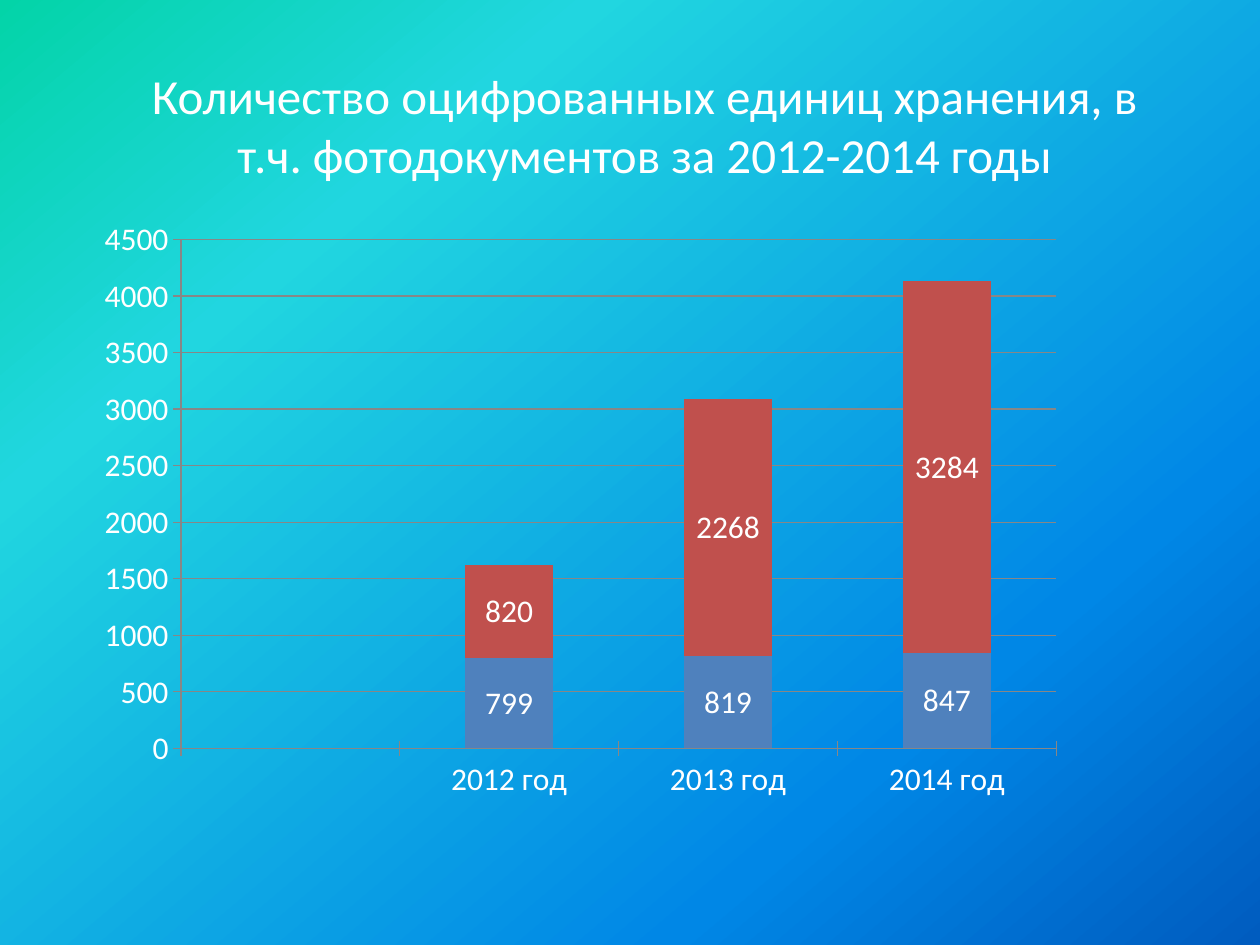
import pptx
import pptx.chart.data
import pptx.dml.color
import pptx.enum.chart
import pptx.enum.text
import pptx.oxml
import pptx.oxml.ns
import pptx.util
from lxml import etree

WIDTH, HEIGHT = 10, 7.5
COLORS = {"text": "FFFFFF", "blue": "4F81BD", "red": "C0504D"}
GRADIENT = {0: "03D4A8", 25: "21D6E0", 75: "0087E6", 100: "005CBF"}
GRADIENT_ANGLE = 50
FONT = "Calibri"

TITLE = ("Количество оцифрованных единиц хранения, "
         "в т.ч. фотодокументов за 2012-2014 годы")
YEARS = ["", "2012 год", "2013 год", "2014 год"]
SERIES = {
    "Series 1": ("blue", [None, 799, 819, 847]),
    "Series 2": ("red", [None, 820, 2268, 3284]),
}
PLOT_SHARES = {"x": 0.104, "y": 0.031, "w": 0.772, "h": 0.816}


def rgb(name):
    return pptx.dml.color.RGBColor.from_string(COLORS[name])


def set_attributes(target, values):
    for name, value in values.items():
        setattr(target, name, value)


def box(left, top, width, height):
    """Turn shares of the slide's size into a placement."""
    return {
        "left": pptx.util.Inches(left * WIDTH),
        "top": pptx.util.Inches(top * HEIGHT),
        "width": pptx.util.Inches(width * WIDTH),
        "height": pptx.util.Inches(height * HEIGHT),
    }


def format_font(font, size):
    set_attributes(font, {"name": FONT, "size": pptx.util.Pt(size)})
    font.color.rgb = rgb("text")


def paint_background(slide):
    fill = slide.background.fill
    fill.gradient()
    fill.gradient_angle = -GRADIENT_ANGLE % 360
    # Replace the default stops with the four of this slide
    stops = slide.background._cSld.find(".//" + pptx.oxml.ns.qn("a:gsLst"))
    for stop in list(stops):
        stops.remove(stop)
    for position, color in GRADIENT.items():
        stop = etree.SubElement(stops, pptx.oxml.ns.qn("a:gs"), pos=str(position * 1000))
        etree.SubElement(stop, pptx.oxml.ns.qn("a:srgbClr"), val=color)


def add_title(slide):
    title = slide.shapes.title
    set_attributes(title, box(0.109, 0.063, 0.805, 0.139))
    frame = title.text_frame
    set_attributes(frame, {
        "text": TITLE,
        "word_wrap": True,
        "auto_size": pptx.enum.text.MSO_AUTO_SIZE.SHAPE_TO_FIT_TEXT,
        "vertical_anchor": pptx.enum.text.MSO_ANCHOR.TOP,
    })
    paragraph = frame.paragraphs[0]
    paragraph.alignment = pptx.enum.text.PP_ALIGN.CENTER
    format_font(paragraph.runs[0].font, 28)


def place_plot(chart):
    """Fix the inner plot area by shares of the chart's size."""
    plot_area = chart._chartSpace.chart.plotArea
    for old in plot_area.findall(pptx.oxml.ns.qn("c:layout")):
        plot_area.remove(old)
    layout = etree.Element(pptx.oxml.ns.qn("c:layout"))
    manual = etree.SubElement(layout, pptx.oxml.ns.qn("c:manualLayout"))
    settings = {"layoutTarget": "inner", "xMode": "edge", "yMode": "edge", **PLOT_SHARES}
    for name, value in settings.items():
        etree.SubElement(manual, pptx.oxml.ns.qn("c:" + name), val=str(value))
    plot_area.insert(0, layout)


def add_stacked_chart(slide):
    data = pptx.chart.data.CategoryChartData()
    data.categories = YEARS
    for name, (_, values) in SERIES.items():
        data.add_series(name, values)
    place = box(0.05, 0.233, 0.9, 0.66)
    chart = slide.shapes.add_chart(
        pptx.enum.chart.XL_CHART_TYPE.COLUMN_STACKED,
        place["left"], place["top"], place["width"], place["height"], data).chart
    set_attributes(chart, {"has_title": False, "has_legend": False})
    format_font(chart.font, 18)
    place_plot(chart)

    # Columns and their value labels
    plot = chart.plots[0]
    set_attributes(plot, {"overlap": 100, "gap_width": 150, "vary_by_categories": False})
    for series, (color, _) in zip(plot.series, SERIES.values()):
        series.format.fill.solid()
        series.format.fill.fore_color.rgb = rgb(color)
        series.data_labels.show_value = True

    # Axes
    for axis, gridlines in ((chart.category_axis, False), (chart.value_axis, True)):
        set_attributes(axis, {
            "has_major_gridlines": gridlines,
            "major_tick_mark": pptx.enum.chart.XL_TICK_MARK.CROSS,
        })
    set_attributes(chart.value_axis,
                   {"minimum_scale": 0, "maximum_scale": 4500, "major_unit": 500})


def main():
    presentation = pptx.Presentation()
    set_attributes(presentation, {
        "slide_width": pptx.util.Inches(WIDTH),
        "slide_height": pptx.util.Inches(HEIGHT),
    })
    slide = presentation.slides.add_slide(presentation.slide_layouts[5])
    paint_background(slide)
    add_stacked_chart(slide)
    add_title(slide)
    presentation.save("out.pptx")


if __name__ == "__main__":
    main()
